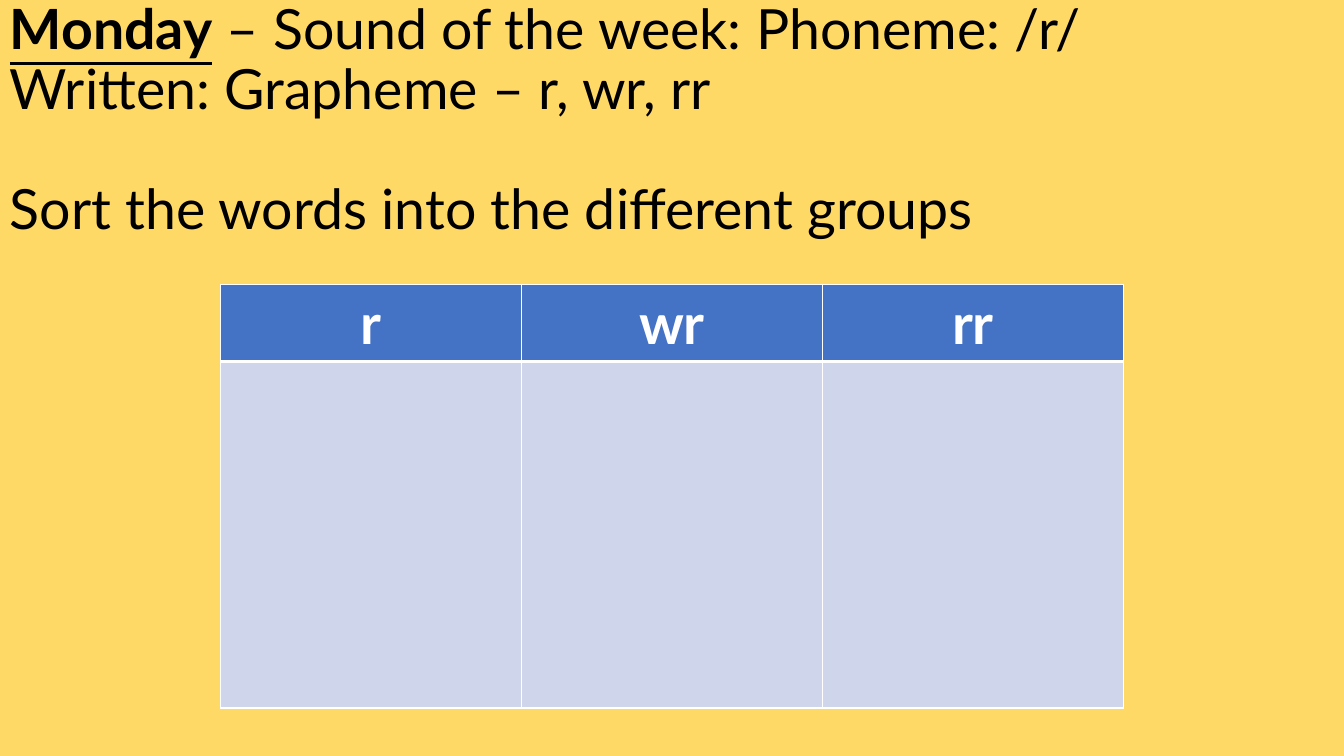
"""Build a phonics slide with a sorting table for the graphemes r, wr and rr."""
import pptx
import pptx.dml.color
import pptx.enum.text
import pptx.oxml.ns
import pptx.util
from lxml import etree

Pt = pptx.util.Pt
RGBColor = pptx.dml.color.RGBColor

YELLOW = RGBColor(0xFF, 0xD9, 0x66)
BLACK = RGBColor(0x00, 0x00, 0x00)
WHITE = RGBColor(0xFF, 0xFF, 0xFF)
BLUE = RGBColor(0x44, 0x72, 0xC4)
PALE_BLUE = RGBColor(0xCF, 0xD5, 0xEA)


class PhonicsSlide:
    """Hold the font, the sizes and the current slide."""

    font = "Lato"
    heading_size = 39.6
    table_size = 40

    def __init__(self, prs):
        """Add a blank slide with a yellow background."""
        self.s = prs.slides.add_slide(prs.slide_layouts[6])
        fill = self.s.background.fill
        fill.solid()
        fill.fore_color.rgb = YELLOW

    def style_run(self, r, size, color, bold=False, underline=False):
        """Apply the slide font to a run."""
        r.font.name = self.font
        r.font.size = Pt(size)
        r.font.color.rgb = color
        r.font.bold = bold
        r.font.underline = underline

    def heading(self, left, top, width, height, day, topic, task):
        """Add the day and topic, with the task after a gap of one line."""
        sp = self.s.shapes.add_textbox(Pt(left), Pt(top), Pt(width), Pt(height))
        tf = sp.text_frame
        tf.word_wrap = True
        tf.vertical_anchor = pptx.enum.text.MSO_ANCHOR.MIDDLE
        tf.text = day + "\n" + task
        first, last = tf.paragraphs
        first.add_run().text = topic
        last.space_before = Pt(43)
        for p in tf.paragraphs:
            p.line_spacing = 0.9
            for r in p.runs:
                is_day = r.text == day
                self.style_run(r, self.heading_size, BLACK, is_day, is_day)

    def border(self, cell, side, width):
        """Draw a white border on one side of a cell."""
        qn = pptx.oxml.ns.qn
        ln = etree.SubElement(cell._tc.get_or_add_tcPr(), qn("a:ln" + side), w=str(Pt(width)))
        fill = etree.SubElement(ln, qn("a:solidFill"))
        etree.SubElement(fill, qn("a:srgbClr"), val=str(WHITE))

    def sorting_table(self, left, top, width, row_heights, headers):
        """Add a table with one empty column under each header."""
        frame = self.s.shapes.add_table(
            len(row_heights), len(headers), Pt(left), Pt(top), Pt(width), Pt(sum(row_heights)))
        table = frame.table
        table.horz_banding = False
        for row, height in zip(table.rows, row_heights):
            row.height = Pt(height)
        for column in table.columns:
            column.width = Pt(width / len(headers))
        for cell, text in zip(table.rows[0].cells, headers):
            self.cell(cell, BLUE, {"L": 1, "R": 1, "T": 1, "B": 3})
            p = cell.text_frame.paragraphs[0]
            p.text = text
            p.alignment = pptx.enum.text.PP_ALIGN.CENTER
            self.style_run(p.runs[0], self.table_size, WHITE, bold=True)
        for cell in table.rows[1].cells:
            self.cell(cell, PALE_BLUE, {"L": 1, "R": 1, "T": 3, "B": 1})

    def cell(self, cell, color, borders):
        """Set the borders and fill of a cell."""
        for side, width in borders.items():
            self.border(cell, side, width)
        cell.fill.solid()
        cell.fill.fore_color.rgb = color


def main():
    """Build and save the slide."""
    prs = pptx.Presentation()
    prs.slide_width = Pt(960)
    prs.slide_height = Pt(540)
    slide = PhonicsSlide(prs)
    slide.heading(
        0, 34.5, 828, 104.5, "Monday",
        " – Sound of the week: Phoneme: /r/ Written: Grapheme – r, wr, rr",
        "Sort the words into the different groups")
    slide.sorting_table(157.5, 203, 645, [55, 247.5], ["r", "wr", "rr"])
    prs.save("out.pptx")


if __name__ == "__main__":
    main()
